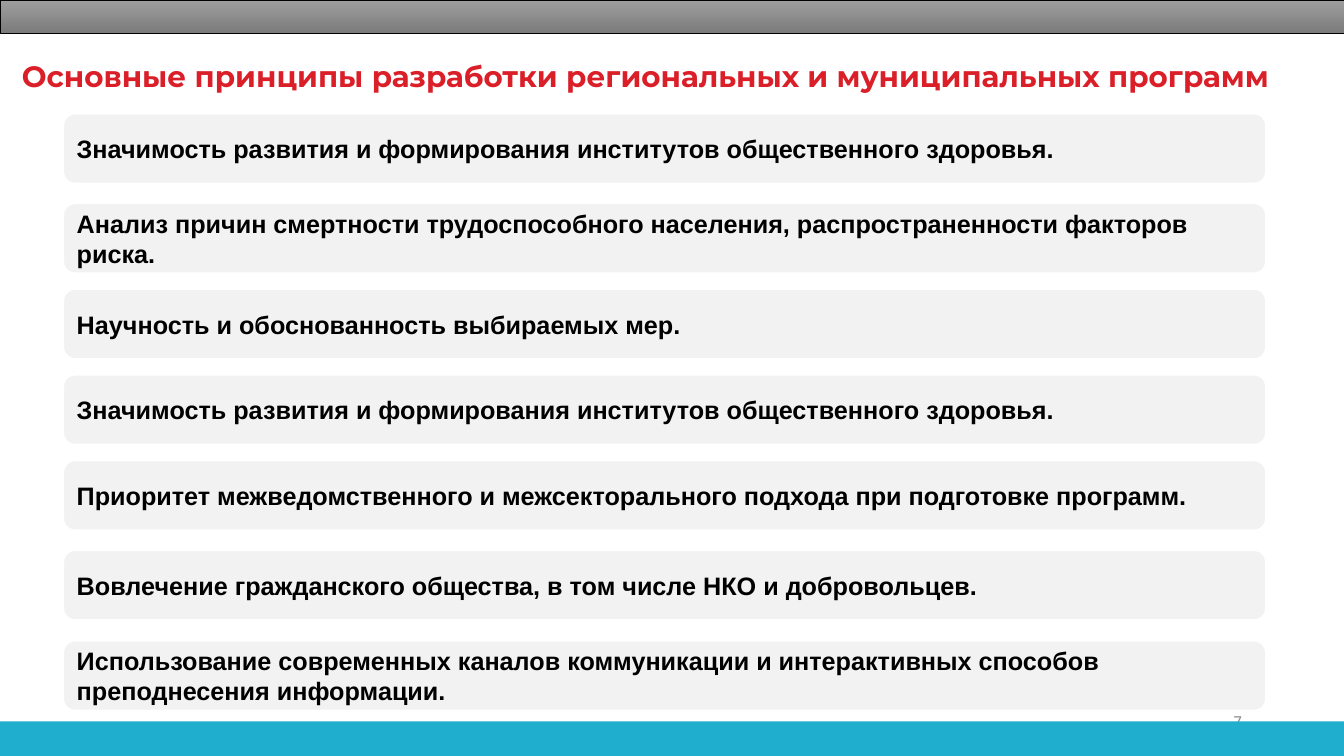
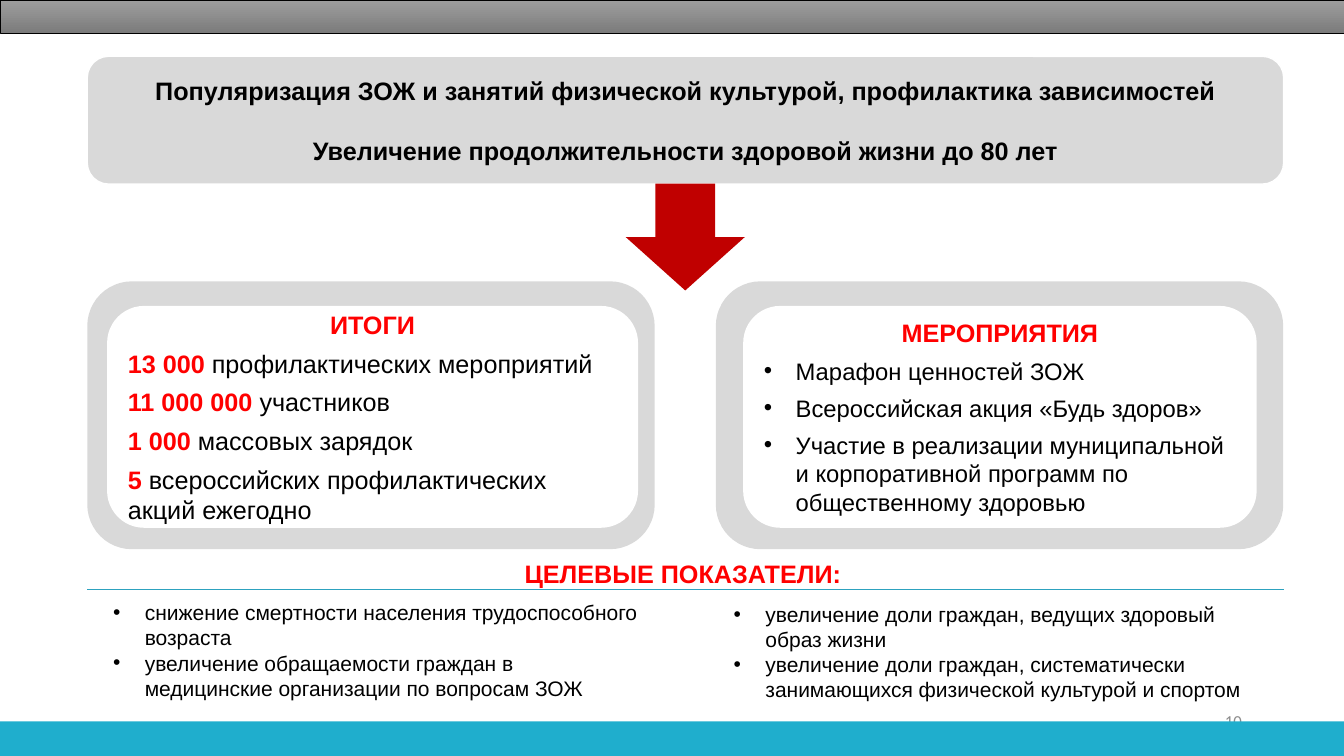
from dataclasses import dataclass

from lxml import etree
from pptx import Presentation
from pptx.dml.color import RGBColor
from pptx.enum.shapes import MSO_CONNECTOR, MSO_SHAPE
from pptx.enum.text import MSO_ANCHOR, PP_ALIGN
from pptx.oxml.ns import qn
from pptx.util import Cm, Pt

RECT, ROUNDED, DOWN_ARROW = MSO_SHAPE.RECTANGLE, MSO_SHAPE.ROUNDED_RECTANGLE, MSO_SHAPE.DOWN_ARROW
STRAIGHT = MSO_CONNECTOR.STRAIGHT
TOP, MIDDLE = MSO_ANCHOR.TOP, MSO_ANCHOR.MIDDLE
LEFT, CENTER, RIGHT = PP_ALIGN.LEFT, PP_ALIGN.CENTER, PP_ALIGN.RIGHT


@dataclass(frozen=True)
class Theme:
    white: str = "FFFFFF"
    black: str = "000000"
    band_light: str = "9D9D9D"
    band_dark: str = "7C7C7C"
    footer: str = "1FAECD"
    bar: str = "F2F2F2"
    panel: str = "D9D9D9"
    arrow: str = "C00000"
    rule: str = "2DA2BF"
    # Text styles: font, size, colour, bold
    title: tuple = ("Montserrat", 21, "DA1F28", True)
    page_number: tuple = ("Calibri", 12, "8C8C8C", False)
    strong: tuple = ("Arial", 18, "000000", True)
    accent: tuple = ("Arial", 18, "FF0000", True)
    body: tuple = ("Arial", 18, "000000", False)
    activity: tuple = ("Arial", 17, "000000", False)
    target: tuple = ("Arial", 15, "000000", False)


THEME = Theme()


def add_box(slide, kind, box, fill=None, line=None, line_width=1, anchor=MIDDLE):
    """Add a preset shape, or a text box when kind is None; box is in centimetres."""
    place = [Cm(length) for length in box]
    if kind is None:
        shape = slide.shapes.add_textbox(*place)
    else:
        shape = slide.shapes.add_shape(kind, *place)
        shape.shadow.inherit = False
        if fill:
            shape.fill.solid()
            shape.fill.fore_color.rgb = RGBColor.from_string(fill)
        if line:
            shape.line.color.rgb = RGBColor.from_string(line)
            shape.line.width = Pt(line_width)
        else:
            shape.line.fill.background()
    shape.text_frame.word_wrap = True
    shape.text_frame.vertical_anchor = anchor
    return shape


def add_text(shape, *runs, align=LEFT, before=0, after=0, bulleted=False):
    """Append one paragraph made of (text, style) runs."""
    frame = shape.text_frame
    paragraph = frame.add_paragraph() if frame.text else frame.paragraphs[0]
    paragraph.alignment = align
    paragraph.space_before, paragraph.space_after = Pt(before), Pt(after)
    if bulleted:
        properties = paragraph._p.get_or_add_pPr()
        properties.set("marL", str(Cm(0.8)))
        properties.set("indent", str(-Cm(0.8)))
        etree.SubElement(properties, qn("a:buFont")).set("typeface", "Arial")
        etree.SubElement(properties, qn("a:buChar")).set("char", "•")
    for text, (font, size, color, bold) in runs:
        run = paragraph.add_run()
        run.text = text
        run.font.name, run.font.size, run.font.bold = font, Pt(size), bold
        run.font.color.rgb = RGBColor.from_string(color)


deck = Presentation()
deck.slide_width, deck.slide_height = Cm(33.87), Cm(19.05)

# Page number and bands shared by both slides
slides = []
for number in ("7", "10"):
    slide = deck.slides.add_slide(deck.slide_layouts[6])
    page = add_box(slide, None, (23.93, 17.65, 7.62, 1.01))
    add_text(page, (number, THEME.page_number), align=RIGHT)
    band = add_box(slide, RECT, (0, 0, 33.87, 0.84), line=THEME.black, line_width=0.5)
    band.fill.gradient()
    band.fill.gradient_angle = 270
    for stop, color in zip(band.fill.gradient_stops, (THEME.band_light, THEME.band_dark)):
        stop.color.rgb = RGBColor.from_string(color)
    add_box(slide, RECT, (0, 18.18, 33.87, 0.87), THEME.footer)
    slides.append(slide)
principles_slide, results_slide = slides

# Slide 1: principles
title = add_box(principles_slide, None, (0.3, 1.35, 33.25, 1.14), anchor=TOP)
add_text(title, ("Основные принципы разработки региональных и муниципальных программ", THEME.title))
principles = [
    (2.87, "Значимость развития и формирования институтов общественного здоровья."),
    (5.13, "Анализ причин смертности трудоспособного населения, распространенности факторов риска."),
    (7.29, "Научность и обоснованность выбираемых мер."),
    (9.45, "Значимость развития и формирования институтов общественного здоровья."),
    (11.61, "Приоритет межведомственного и межсекторального подхода при подготовке программ."),
    (13.87, "Вовлечение гражданского общества, в том числе НКО и добровольцев."),
    (16.15, "Использование современных каналов коммуникации и интерактивных способов "
            "преподнесения информации."),
]
for top, principle in principles:
    bar = add_box(principles_slide, ROUNDED, (1.6, top, 30.3, 1.75), THEME.bar, THEME.white)
    add_text(bar, (principle, THEME.strong))

# Slide 2: goal
goal = add_box(results_slide, ROUNDED, (2.2, 1.42, 30.15, 3.22), THEME.panel, THEME.white)
add_text(goal, ("Популяризация ЗОЖ и занятий физической культурой, профилактика зависимостей",
                THEME.strong), align=CENTER)
add_text(goal, ("Увеличение продолжительности здоровой жизни до 80 лет", THEME.strong),
         align=CENTER, before=21)
add_box(results_slide, DOWN_ARROW, (15.77, 4.63, 3, 2.69), THEME.arrow)

# Slide 2: results and activities
cards = []
for frame_left, card_left, card_width, heading in (
    (2.2, 2.7, 13.38, "ИТОГИ"),
    (18.04, 18.73, 12.94, "МЕРОПРИЯТИЯ"),
):
    add_box(results_slide, ROUNDED, (frame_left, 7.09, 14.3, 6.75), THEME.panel)
    card = add_box(results_slide, ROUNDED, (card_left, 7.71, card_width, 5.59), THEME.white)
    add_text(card, (heading, THEME.accent), align=CENTER, after=6)
    cards.append(card)
results_card, activities_card = cards

for amount, result in (
    ("13 000", "профилактических мероприятий"),
    ("11 000 000", "участников"),
    ("1 000", "массовых зарядок"),
    ("5", "всероссийских профилактических акций ежегодно"),
):
    add_text(results_card, (amount, THEME.accent), (" " + result, THEME.body), after=6)
for activity in (
    "Марафон ценностей ЗОЖ",
    "Всероссийская акция «Будь здоров»",
    "Участие в реализации муниципальной и корпоративной программ по общественному здоровью",
):
    add_text(activities_card, (activity, THEME.activity), after=6, bulleted=True)

# Slide 2: targets
rule = results_slide.shapes.add_connector(STRAIGHT, Cm(2.2), Cm(14.86), Cm(32.35), Cm(14.86))
rule.line.color.rgb = RGBColor.from_string(THEME.rule)
rule.line.width = Pt(0.5)
etree.SubElement(rule._element.spPr, qn("a:effectLst"))
targets_heading = add_box(results_slide, None, (12.97, 13.94, 9, 1.02), anchor=TOP)
add_text(targets_heading, ("ЦЕЛЕВЫЕ ПОКАЗАТЕЛИ:", THEME.accent))
for left, top, targets in (
    (2.6, 14.99, ("снижение смертности населения трудоспособного возраста",
                  "увеличение обращаемости граждан в медицинские организации по вопросам ЗОЖ")),
    (18.24, 15.03, ("увеличение доли граждан, ведущих здоровый образ жизни",
                    "увеличение доли граждан, систематически занимающихся физической "
                    "культурой и спортом")),
):
    column = add_box(results_slide, None, (left, top, 13.92, 2.82), anchor=TOP)
    for target in targets:
        add_text(column, (target, THEME.target), bulleted=True)

deck.save("out.pptx")
